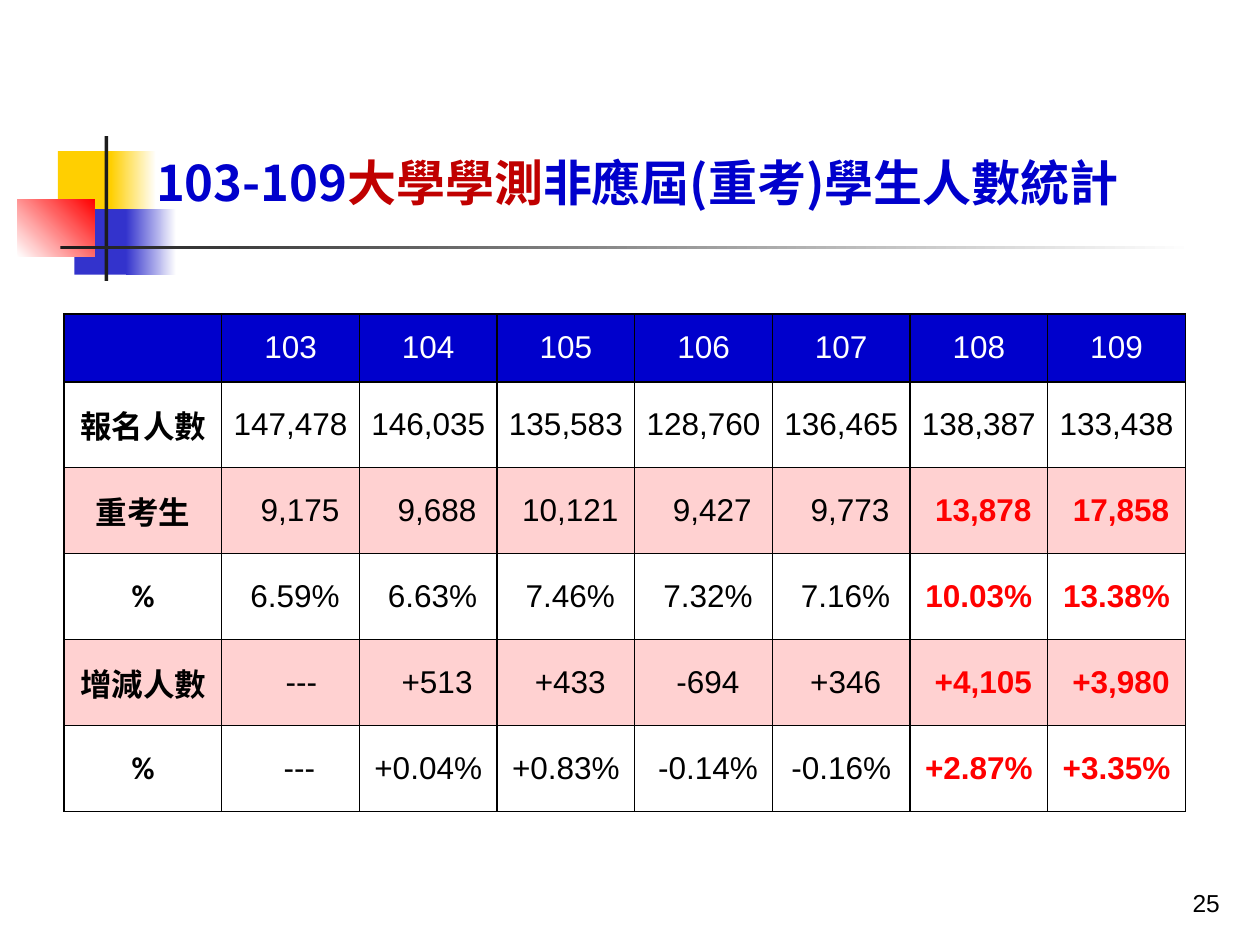
from lxml.etree import SubElement
from pptx import Presentation
from pptx.dml.color import RGBColor
from pptx.enum.shapes import MSO_SHAPE
from pptx.enum.text import MSO_ANCHOR, PP_ALIGN
from pptx.oxml.ns import qn
from pptx.util import Inches, Pt

BLUE = RGBColor(0x00, 0x00, 0xCC)
DARK_RED = RGBColor(0xC0, 0x00, 0x00)
RED = RGBColor(0xFF, 0x00, 0x00)
PINK = RGBColor(0xFF, 0xD1, 0xD1)
YELLOW = RGBColor(0xFF, 0xCF, 0x01)
INDIGO = RGBColor(0x33, 0x33, 0xCC)
INK = RGBColor(0x1C, 0x1C, 0x1C)
WHITE = RGBColor(0xFF, 0xFF, 0xFF)
BLACK = RGBColor(0x00, 0x00, 0x00)
CJK_FONT = "Noto Sans CJK SC"

# Content
TITLE = [("103-109", BLUE), ("大學學測", DARK_RED), ("非應屆(重考)學生人數統計", BLUE)]
PAGE_NUMBER = "25"
ROWS = [
    ["", "103", "104", "105", "106", "107", "108", "109"],
    ["報名人數", "147,478", "146,035", "135,583", "128,760", "136,465", "138,387", "133,438"],
    ["重考生", "9,175", "9,688", "10,121", "9,427", "9,773", "13,878", "17,858"],
    ["%", "6.59%", "6.63%", "7.46%", "7.32%", "7.16%", "10.03%", "13.38%"],
    ["增減人數", "---", "+513", "+433", "-694", "+346", "+4,105", "+3,980"],
    ["%", "---", "+0.04%", "+0.83%", "-0.14%", "-0.16%", "+2.87%", "+3.35%"],
]
# Left indents in inches that line up the figures, by row; other rows have none
INDENTS = {
    2: [0, 0.15, 0.14, 0.07, 0.14, 0.14, 0.07, 0.07],
    3: [0, 0.07, 0.07, 0.07, 0.07, 0.07, 0, 0],
    4: [0, 0.17, 0.14, 0.07, 0.07, 0.07, 0.07, 0.07],
    5: [0, 0.14, 0, 0, 0.07, 0, 0, 0],
}
HIGHLIGHT_COLUMN = 6  # from 108 on, in the repeat-student rows
# Ornament: left, top, width, height, colours, gradient angle
ORNAMENT = [
    (0.46, 1.2, 0.48, 0.52, [YELLOW], 0),
    (0.88, 1.2, 0.36, 0.52, [YELLOW, WHITE], 0),
    (0.59, 1.66, 0.46, 0.52, [INDIGO], 0),
    (1, 1.66, 0.4, 0.52, [INDIGO, WHITE], 0),
    (0.14, 1.58, 0.61, 0.46, [WHITE, RED], 45),
    (0.83, 1.08, 0.03, 1.15, [INK], 0),
    (0.48, 1.95, 9, 0.03, [INK, WHITE], 0),
]


def add_span(para, text, color, **formats):
    span = para.add_run()
    span.text = text
    span.font.color.rgb = color
    for name, value in formats.items():
        setattr(span.font, name, value)
    SubElement(span.font._element, qn("a:ea")).set("typeface", CJK_FONT)


def add_text_box(page, place, align):
    frame = page.shapes.add_textbox(*map(Inches, place)).text_frame
    frame.word_wrap = True
    frame.vertical_anchor = MSO_ANCHOR.BOTTOM
    frame.paragraphs[0].alignment = align
    return frame.paragraphs[0]


def add_borders(cell):
    properties = cell._tc.get_or_add_tcPr()
    for position, side in enumerate(("lnL", "lnR", "lnT", "lnB")):
        line = SubElement(properties, qn("a:" + side), w=str(Pt(1)))
        fill = SubElement(line, qn("a:solidFill"))
        SubElement(fill, qn("a:srgbClr"), val=str(BLACK))
        properties.insert(position, line)


def fill_cell(cell, row, column):
    header, label = row == 0, column == 0
    highlight = row > 1 and column >= HIGHLIGHT_COLUMN
    formats = {"vertical_anchor": MSO_ANCHOR.MIDDLE,
               "margin_left": Inches(0.07), "margin_right": Inches(0.07),
               "margin_top": 0, "margin_bottom": 0}
    for name, value in formats.items():
        setattr(cell, name, value)
    cell.fill.solid()
    cell.fill.fore_color.rgb = BLUE if header else PINK if row in (2, 4) else WHITE
    add_borders(cell)
    para = cell.text_frame.paragraphs[0]
    para.alignment = PP_ALIGN.CENTER
    indent = INDENTS.get(row, [0] * 8)[column]
    if indent:
        para._p.get_or_add_pPr().set("marL", str(Inches(indent)))
    if ROWS[row][column]:
        color = WHITE if header else RED if highlight else BLACK
        add_span(para, ROWS[row][column], color, size=Pt(18),
                 name="Calibri" if label else "Arial", bold=label or highlight)


deck = Presentation()
deck.slide_width, deck.slide_height = Inches(10), Inches(7.5)
page = deck.slides.add_slide(deck.slide_layouts[6])

# Corner ornament and rule
for *place, colors, angle in ORNAMENT:
    block = page.shapes.add_shape(MSO_SHAPE.RECTANGLE, *map(Inches, place))
    block.shadow.inherit = False
    block.line.fill.background()
    if len(colors) == 1:
        block.fill.solid()
        block.fill.fore_color.rgb = colors[0]
    else:
        block.fill.gradient()
        block.fill.gradient_angle = angle
        for stop, color in zip(block.fill.gradient_stops, colors):
            stop.color.rgb = color

# Page number and title
number = add_text_box(page, (7.7, 6.83, 2.08, 0.5), PP_ALIGN.RIGHT)
add_span(number, PAGE_NUMBER, BLACK, size=Pt(14), name="Arial")
title = add_text_box(page, (1.14, 0.13, 8.64, 1.6), PP_ALIGN.LEFT)
for text, color in TITLE:
    add_span(title, text, color, size=Pt(28), name=CJK_FONT, bold=True)

# Table of counts: the label column and header row differ, the rest is even
WIDTH, HEIGHT, LABEL_WIDTH, HEADER_HEIGHT = 8.9, 3.95, 1.25, 0.54
table = page.shapes.add_table(len(ROWS), len(ROWS[0]), Inches(0.51), Inches(2.49),
                              Inches(WIDTH), Inches(HEIGHT)).table
table.first_row = table.horz_banding = False
for column, part in enumerate(table.columns):
    even = (WIDTH - LABEL_WIDTH) / (len(ROWS[0]) - 1)
    part.width = Inches(even if column else LABEL_WIDTH)
for row, part in enumerate(table.rows):
    even = (HEIGHT - HEADER_HEIGHT) / (len(ROWS) - 1)
    part.height = Inches(even if row else HEADER_HEIGHT)
    for column, cell in enumerate(part.cells):
        fill_cell(cell, row, column)

deck.save("out.pptx")
